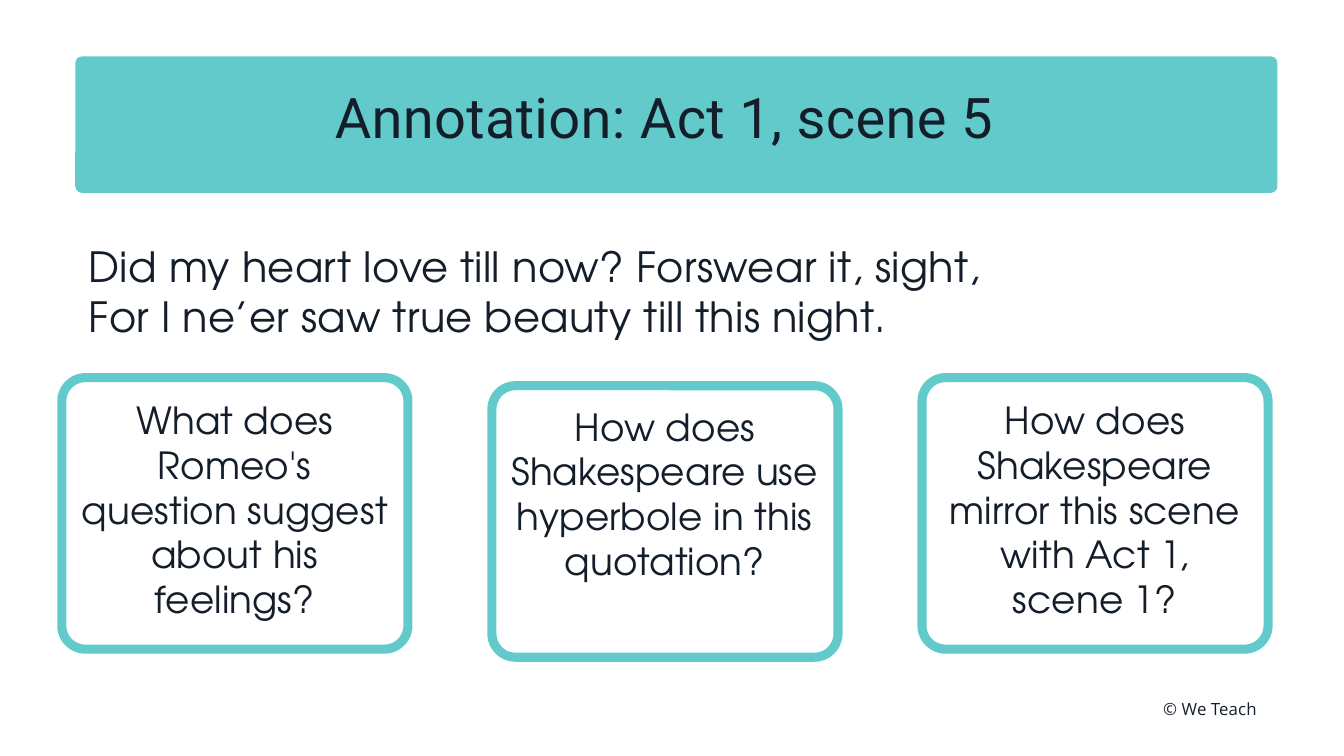
"""Build the annotation slide on Act 1, scene 5."""
from dataclasses import dataclass

from pptx import Presentation
from pptx.dml.color import RGBColor
from pptx.enum.shapes import MSO_SHAPE
from pptx.enum.text import MSO_ANCHOR, MSO_AUTO_SIZE, PP_ALIGN
from pptx.util import Emu, Pt

ROUNDED = MSO_SHAPE.ROUNDED_RECTANGLE
TOP = MSO_ANCHOR.TOP
NO_AUTOFIT = MSO_AUTO_SIZE.NONE
LEFT, CENTER = PP_ALIGN.LEFT, PP_ALIGN.CENTER
EMU_PER_PX = 9144
TITLE_ONLY = 5


@dataclass(frozen=True)
class Theme:
    ink: RGBColor = RGBColor(0x14, 0x1E, 0x2B)
    teal: RGBColor = RGBColor(0x62, 0xCA, 0xCA)
    title_font: str = "Roboto"
    body_font: str = "TeX Gyre Adventor"
    credit_font: str = "Open Sans"
    title_size: float = 60
    quote_size: float = 44.6
    question_size: float = 40
    credit_size: float = 18
    outline: float = 9.75


THEME = Theme()
CARD_LEFT, CARD_STEP, CARD_WIDTH, CARD_HEIGHT = 92, 640, 515, 404
QUOTE = [
    "Did my heart love till now? Forswear it, sight,",
    "For I ne’er saw true beauty till this night.",
]
QUESTIONS = [
    ("What does Romeo's question suggest about his feelings?", 562, 24, 29),
    ("How does Shakespeare use hyperbole in this quotation?", 574, 13, 27),
    ("How does Shakespeare mirror this scene with Act 1, scene 1?", 562, 37, 29),
]


def px(*lengths):
    return [Emu(length * EMU_PER_PX) for length in lengths]


def place(shape, box):
    shape.left, shape.top, shape.width, shape.height = px(*box)


def write_text(shape, lines, *, font, size, leading, spacing, align=LEFT):
    frame = shape.text_frame
    frame.word_wrap = True
    frame.auto_size = NO_AUTOFIT
    frame.vertical_anchor = TOP
    frame.margin_left = frame.margin_top = 0
    frame.margin_right = frame.margin_bottom = 0
    for index, line in enumerate(lines):
        paragraph = frame.add_paragraph() if index else frame.paragraphs[0]
        paragraph.alignment = align
        paragraph.line_spacing = Pt(leading)
        run = paragraph.add_run()
        run.text = line
        run.font.name = font
        run.font.size = Pt(size)
        run.font.color.rgb = THEME.ink
        run.font._element.set("spc", str(round(spacing * 100)))


def add_text(slide, box, lines, **text_format):
    write_text(slide.shapes.add_textbox(*px(*box)), lines, **text_format)


def add_rounded(slide, box, radius):
    shape = slide.shapes.add_shape(ROUNDED, *px(*box))
    shape.adjustments[0] = radius / min(box[2:])
    shape.shadow.inherit = False
    return shape


def add_banner(slide, title):
    banner = add_rounded(slide, (112, 84, 1789, 203), 10)
    banner.fill.solid()
    banner.fill.fore_color.rgb = THEME.teal
    banner.line.fill.background()
    heading = slide.shapes.title
    banner._element.addnext(heading._element)
    place(heading, (328, 123, 1321, 112))
    write_text(heading, [title], font=THEME.title_font, size=THEME.title_size,
               leading=72, spacing=0.4, align=CENTER)


def add_question_card(slide, left, top, question, inset, drop):
    card = add_rounded(slide, (left, top, CARD_WIDTH, CARD_HEIGHT), 35)
    card.fill.background()
    card.line.color.rgb = THEME.teal
    card.line.width = Pt(THEME.outline)
    add_text(slide, (left + inset, top + drop, CARD_WIDTH - 2 * inset, 328),
             [question], font=THEME.body_font, size=THEME.question_size,
             leading=48, spacing=0.2, align=CENTER)


def main():
    presentation = Presentation()
    presentation.slide_width, presentation.slide_height = px(2000, 1125)
    slide = presentation.slides.add_slide(presentation.slide_layouts[TITLE_ONLY])
    add_banner(slide, "Annotation: Act 1, scene 5")
    add_text(slide, (132, 358, 1756, 222), QUOTE, font=THEME.body_font,
             size=THEME.quote_size, leading=53.6, spacing=0.3)
    for column, (question, top, inset, drop) in enumerate(QUESTIONS):
        left = CARD_LEFT + column * CARD_STEP
        add_question_card(slide, left, top, question, inset, drop)
    add_text(slide, (1731, 1040, 170, 34), ["© We Teach"],
             font=THEME.credit_font, size=THEME.credit_size,
             leading=21.6, spacing=0.1)
    presentation.save("out.pptx")


if __name__ == "__main__":
    main()
